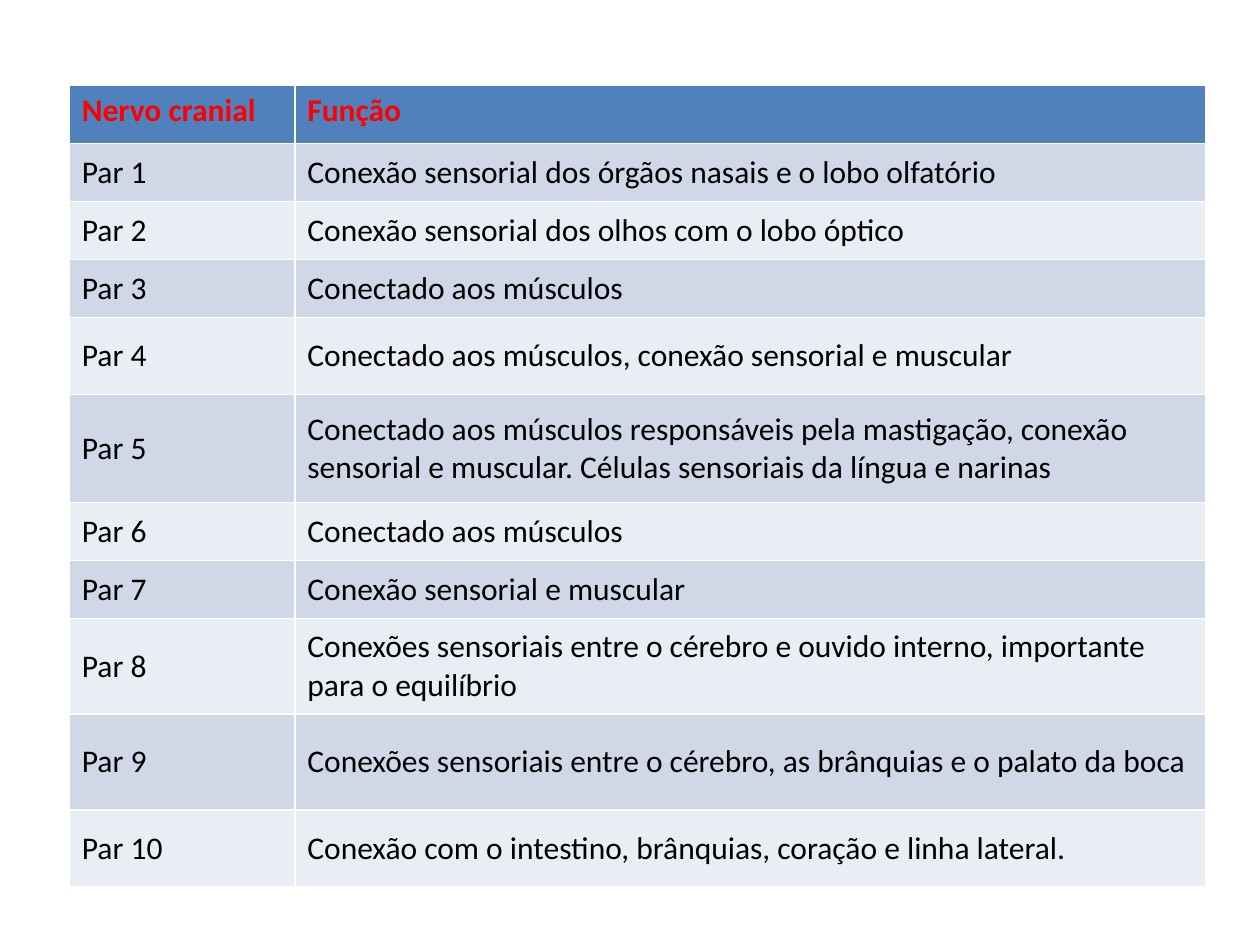
import dataclasses

import pptx
import pptx.dml.color
import pptx.enum.text
import pptx.util

Inches = pptx.util.Inches
MIDDLE = pptx.enum.text.MSO_ANCHOR.MIDDLE
TOP = pptx.enum.text.MSO_ANCHOR.TOP


@dataclasses.dataclass(frozen=True)
class Theme:
    font: str = "Calibri"
    size: int = 18
    header_fill: str = "4F81BD"
    header_text: str = "FF0000"
    body_text: str = "000000"
    bands: tuple = ("D0D8E8", "E9EDF4")


THEME = Theme()
COLUMN_WIDTHS = (1.79, 7.23)
HEADER = ("Nervo cranial", "Função")
HEADER_HEIGHT = 0.46

# Row height in inches and function of each cranial nerve pair, in order
NERVES = (
    (0.46, "Conexão sensorial dos órgãos nasais e o lobo olfatório"),
    (0.46, "Conexão sensorial dos olhos com o lobo óptico"),
    (0.46, "Conectado aos músculos"),
    (0.61, "Conectado aos músculos, conexão sensorial e muscular"),
    (0.86, "Conectado aos músculos responsáveis pela mastigação, conexão "
           "sensorial e muscular. Células sensoriais da língua e narinas"),
    (0.46, "Conectado aos músculos"),
    (0.46, "Conexão sensorial e muscular"),
    (0.76, "Conexões sensoriais entre o cérebro e ouvido interno, "
           "importante para o equilíbrio"),
    (0.76, "Conexões sensoriais entre o cérebro, as brânquias e o palato da boca"),
    (0.61, "Conexão com o intestino, brânquias, coração e linha lateral."),
)


def color(code):
    return pptx.dml.color.RGBColor.from_string(code)


def fill_row(row, height, texts, fill, text_color, bold, anchor):
    row.height = Inches(height)
    for cell, text in zip(row.cells, texts):
        cell.text = text
        cell.vertical_anchor = anchor
        cell.fill.solid()
        cell.fill.fore_color.rgb = color(fill)
        font = cell.text_frame.paragraphs[0].font
        font.name = THEME.font
        font.size = pptx.util.Pt(THEME.size)
        font.bold = bold
        font.color.rgb = color(text_color)


def add_nerve_table(page):
    height = HEADER_HEIGHT + sum(row_height for row_height, _ in NERVES)
    table = page.shapes.add_table(
        len(NERVES) + 1, len(COLUMN_WIDTHS), Inches(0.55), Inches(0.68),
        Inches(sum(COLUMN_WIDTHS)), Inches(height)).table
    for column, width in zip(table.columns, COLUMN_WIDTHS):
        column.width = Inches(width)

    # Header row
    fill_row(table.rows[0], HEADER_HEIGHT, HEADER,
             THEME.header_fill, THEME.header_text, True, TOP)

    # Banded rows, one per nerve pair
    for number, (row_height, function) in enumerate(NERVES, start=1):
        band = THEME.bands[(number - 1) % len(THEME.bands)]
        fill_row(table.rows[number], row_height, (f"Par {number}", function),
                 band, THEME.body_text, False, MIDDLE)


def main():
    deck = pptx.Presentation()
    deck.slide_width = Inches(10)
    deck.slide_height = Inches(7.5)
    page = deck.slides.add_slide(deck.slide_layouts[6])  # blank layout
    add_nerve_table(page)
    deck.save("out.pptx")


if __name__ == "__main__":
    main()
